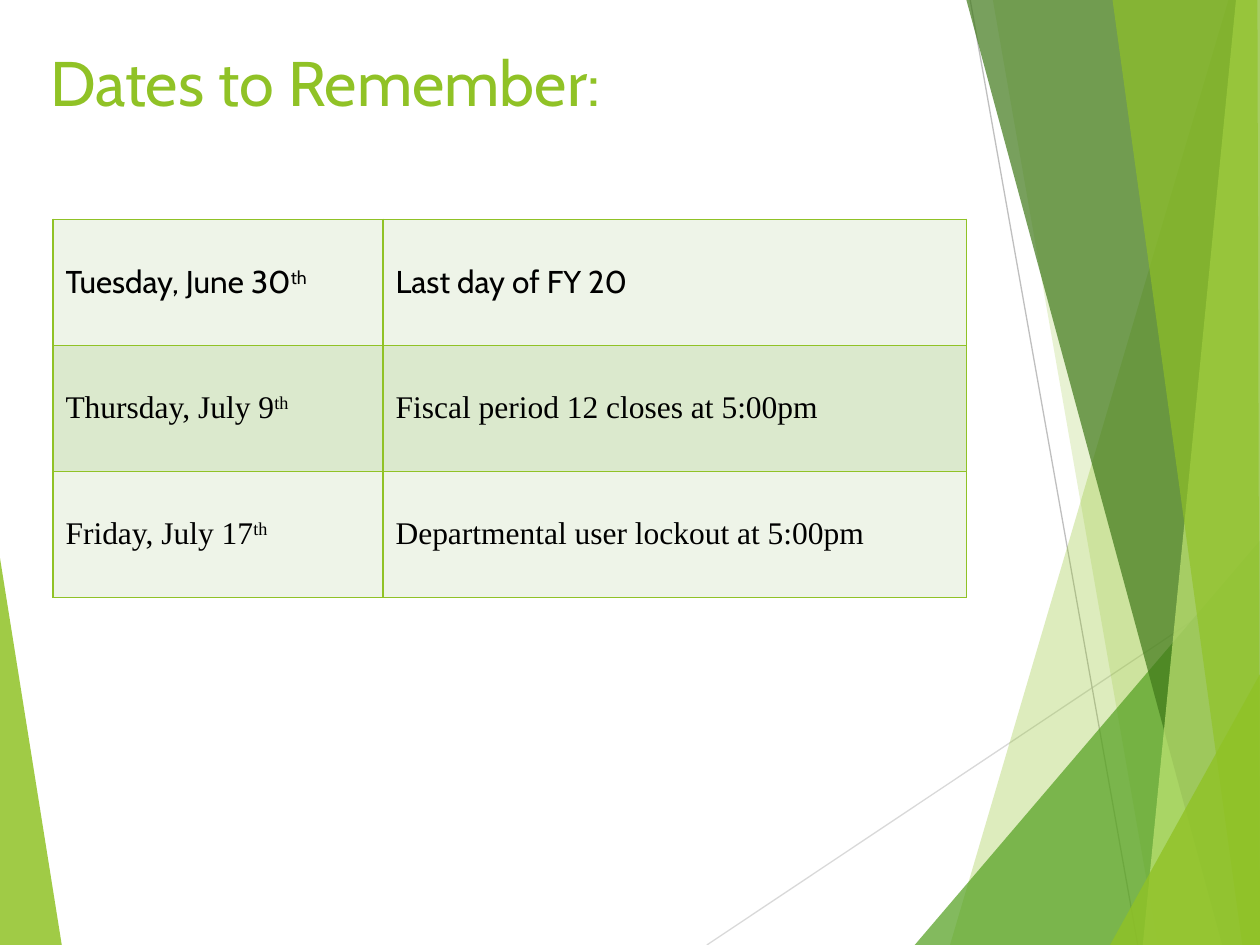
"""Build the "Dates to Remember" slide with its faceted green border."""
import lxml.etree
import pptx
import pptx.dml.color
import pptx.enum.shapes
import pptx.enum.text
import pptx.oxml.ns
import pptx.util

RGBColor = pptx.dml.color.RGBColor
Inches = pptx.util.Inches
Pt = pptx.util.Pt
qn = pptx.oxml.ns.qn

LIME = RGBColor(0x90, 0xC2, 0x26)
GREEN = RGBColor(0x54, 0xA0, 0x21)
DARK_GREEN = RGBColor(0x3F, 0x78, 0x19)
PALE_LIME = RGBColor(0xC0, 0xE4, 0x74)
LIGHT_GREY = RGBColor(0xD9, 0xD9, 0xD9)
GREY = RGBColor(0xBF, 0xBF, 0xBF)
BLACK = RGBColor(0, 0, 0)
BANDS = (RGBColor(0xEE, 0xF4, 0xE8), RGBColor(0xDB, 0xE9, 0xCD))

WIDTH, HEIGHT = 10, 7.5
TITLE = "Dates to Remember:"
DATES = [
    ("Tuesday, June 30", "th", "Last day of FY 20", "Cabin"),
    ("Thursday, July 9", "th", "Fiscal period 12 closes at 5:00pm", "Times New Roman"),
    ("Friday, July 17", "th", "Departmental user lockout at 5:00pm", "Times New Roman"),
]
COLUMNS = (2.62, 4.63)
ROW_HEIGHT = 1
RAYS = [
    ((5.61, HEIGHT), (WIDTH, 4.57), LIGHT_GREY),
    ((7.7, 0), (9.03, HEIGHT), GREY),
]
FACETS = [
    ([(0, 4.43), (0.49, HEIGHT), (0, HEIGHT)], LIME, 85),
    ([(9.75, 0), (7.54, HEIGHT), (WIDTH, HEIGHT), (WIDTH, 0)], LIME, 30),
    ([(7.88, 0), (9.19, HEIGHT), (WIDTH, HEIGHT), (WIDTH, 0)], LIME, 20),
    ([(7.26, HEIGHT), (WIDTH, 4.29), (WIDTH, HEIGHT)], GREEN, 72),
    ([(7.67, 0), (9.7, HEIGHT), (WIDTH, HEIGHT), (WIDTH, 0)], DARK_GREEN, 70),
    ([(9.81, 0), (9.07, HEIGHT), (WIDTH, HEIGHT), (WIDTH, 0)], PALE_LIME, 70),
    ([(8.83, 0), (9.86, HEIGHT), (WIDTH, HEIGHT), (9.98, 0)], LIME, 65),
    ([(8.81, HEIGHT), (WIDTH, 5.35), (WIDTH, HEIGHT)], LIME, 80),
]


def add_ray(page, start, end, color):
    ray = page.shapes.add_connector(
        pptx.enum.shapes.MSO_CONNECTOR.STRAIGHT, *map(Inches, start + end))
    ray.line.color.rgb = color
    ray.line.width = Pt(0.75)
    lxml.etree.SubElement(ray._element.spPr, qn("a:effectLst"))


def add_facet(page, points, color, opacity):
    first, *rest = [(Inches(x), Inches(y)) for x, y in points]
    builder = page.shapes.build_freeform(*first)
    builder.add_line_segments(rest, close=True)
    facet = builder.convert_to_shape()
    facet.shadow.inherit = False
    facet.line.fill.background()
    facet.fill.solid()
    facet.fill.fore_color.rgb = color
    tint = facet._element.spPr.find(qn("a:solidFill"))[0]
    lxml.etree.SubElement(tint, qn("a:alpha"), val=str(opacity * 1000))


def add_span(para, text, font, size, color, raised=False):
    span = para.add_run()
    span.text = text
    span.font.name = font
    span.font.size = Pt(size)
    span.font.color.rgb = color
    if raised:
        span.font._element.set("baseline", "30000")


def style_cell(cell, fill):
    cell.vertical_anchor = pptx.enum.text.MSO_ANCHOR.MIDDLE
    properties = cell._tc.get_or_add_tcPr()
    for side in ("lnL", "lnR", "lnT", "lnB"):
        border = lxml.etree.SubElement(properties, qn("a:" + side), w=str(Pt(1)))
        paint = lxml.etree.SubElement(border, qn("a:solidFill"))
        lxml.etree.SubElement(paint, qn("a:srgbClr"), val=str(LIME))
    cell.fill.solid()
    cell.fill.fore_color.rgb = fill


def add_title(page):
    box = page.shapes.add_textbox(*map(Inches, (0.3, 0.3, 6.94, 1.44)))
    box.text_frame.word_wrap = True
    add_span(box.text_frame.paragraphs[0], TITLE, "Cabin", 36, LIME)


def add_dates(page):
    frame = page.shapes.add_table(
        len(DATES), len(COLUMNS), Inches(0.42), Inches(1.74),
        Inches(sum(COLUMNS)), Inches(ROW_HEIGHT * len(DATES)))
    table = frame.table
    for column, width in zip(table.columns, COLUMNS):
        column.width = Inches(width)
    for index, (day, suffix, event, font) in enumerate(DATES):
        table.rows[index].height = Inches(ROW_HEIGHT)
        day_cell, event_cell = table.rows[index].cells
        for cell in (day_cell, event_cell):
            style_cell(cell, BANDS[index % 2])
        day_para = day_cell.text_frame.paragraphs[0]
        add_span(day_para, day, font, 18, BLACK)
        add_span(day_para, suffix, font, 18, BLACK, raised=True)
        add_span(event_cell.text_frame.paragraphs[0], event, font, 18, BLACK)


def main():
    deck = pptx.Presentation()
    deck.slide_width, deck.slide_height = Inches(WIDTH), Inches(HEIGHT)
    page = deck.slides.add_slide(deck.slide_layouts[6])
    for ray in RAYS:
        add_ray(page, *ray)
    for facet in FACETS:
        add_facet(page, *facet)
    add_title(page)
    add_dates(page)
    deck.save("out.pptx")


if __name__ == "__main__":
    main()
